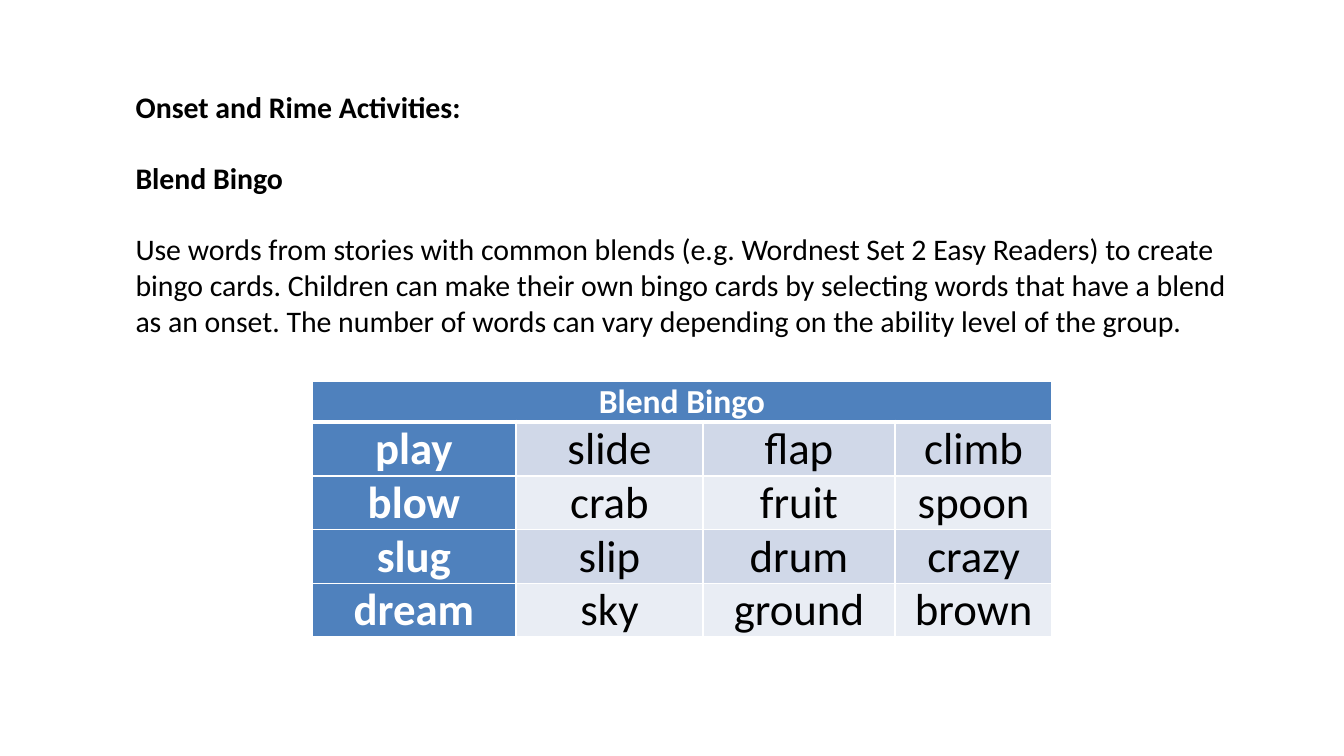
from dataclasses import dataclass

from lxml.etree import SubElement
from pptx import Presentation
from pptx.dml.color import RGBColor
from pptx.enum.text import MSO_ANCHOR, MSO_AUTO_SIZE, PP_ALIGN
from pptx.oxml.ns import qn
from pptx.util import Inches, Pt


@dataclass(frozen=True)
class Theme:
    font: str = "Calibri"
    black: str = "000000"
    white: str = "FFFFFF"
    header: str = "4F81BD"
    bands: tuple = ("D0D8E8", "E9EDF4")
    body_size: float = 16
    caption_size: float = 18
    word_size: float = 24
    paragraph_gap: float = 19
    table_spacing: float = 0.98
    thin_border: float = 1
    thick_border: float = 3


def apply_format(target, values):
    for name, value in values.items():
        setattr(target, name, value)


class SlideBuilder:
    def __init__(self, presentation, theme):
        self.theme = theme
        self.slide = presentation.slides.add_slide(presentation.slide_layouts[5])

    def style_paragraph(self, paragraph, size, color, bold, alignment):
        paragraph.alignment = alignment
        apply_format(paragraph.font, {"name": self.theme.font, "size": Pt(size), "bold": bold})
        paragraph.font.color.rgb = RGBColor.from_string(color)

    def fill_text(self, shape, items):
        frame = shape.text_frame
        apply_format(frame, {
            "word_wrap": True,
            "auto_size": MSO_AUTO_SIZE.NONE,
            "vertical_anchor": MSO_ANCHOR.TOP,
        })
        for index, (text, bold) in enumerate(items):
            paragraph = frame.add_paragraph() if index else frame.paragraphs[0]
            paragraph.text = text
            if index:
                paragraph.space_before = Pt(self.theme.paragraph_gap)
            self.style_paragraph(
                paragraph, self.theme.body_size, self.theme.black, bold, PP_ALIGN.LEFT
            )

    def add_title(self, text, left, top, width, height):
        title = self.slide.shapes.title
        apply_format(title, {"left": left, "top": top, "width": width, "height": height})
        self.fill_text(title, [(text, True)])

    def add_text(self, items, left, top, width, height):
        self.fill_text(self.slide.shapes.add_textbox(left, top, width, height), items)

    def set_borders(self, cell, widths):
        properties = cell._tc.get_or_add_tcPr()
        for side, width in widths.items():
            line = SubElement(properties, qn(f"a:ln{side}"), w=str(Pt(width)))
            fill = SubElement(line, qn("a:solidFill"))
            SubElement(fill, qn("a:srgbClr"), val=self.theme.white)

    def style_cell(self, cell, row, column):
        theme = self.theme
        heading = row == 0 or column == 0
        widths = dict.fromkeys("LRTB", theme.thin_border)
        if row < 2:
            widths["T" if row else "B"] = theme.thick_border
        self.set_borders(cell, widths)
        apply_format(cell, {
            "margin_left": Inches(0.07),
            "margin_right": Inches(0.07),
            "margin_top": 0,
            "margin_bottom": 0,
        })
        cell.fill.solid()
        color = theme.header if heading else theme.bands[(row - 1) % 2]
        cell.fill.fore_color.rgb = RGBColor.from_string(color)
        paragraph = cell.text_frame.paragraphs[0]
        paragraph.line_spacing = theme.table_spacing
        self.style_paragraph(
            paragraph,
            theme.word_size if row else theme.caption_size,
            theme.white if heading else theme.black,
            heading,
            PP_ALIGN.CENTER,
        )

    def add_bingo_table(self, caption, words, left, top, column_widths, row_heights):
        shape = self.slide.shapes.add_table(
            len(row_heights), len(column_widths), left, top,
            sum(column_widths), sum(row_heights),
        )
        table = shape.table
        for column, width in zip(table.columns, column_widths):
            column.width = width
        for row, height in zip(table.rows, row_heights):
            row.height = height
        table.cell(0, 0).merge(table.cell(0, len(column_widths) - 1))
        table.cell(0, 0).text = caption
        for row in range(len(row_heights)):
            for column in range(len(column_widths)):
                cell = table.cell(row, column)
                if row:
                    cell.text = words[row - 1][column]
                self.style_cell(cell, row, column)


def main():
    presentation = Presentation()
    slide_width = Inches(10)
    apply_format(presentation, {
        "slide_width": slide_width,
        "slide_height": slide_width * 9 // 16,
    })
    builder = SlideBuilder(presentation, Theme())
    builder.add_title(
        "Onset and Rime Activities:", Inches(0.91), Inches(0.61), Inches(8.35), Inches(0.37)
    )
    instructions = [
        ("Blend Bingo", True),
        ("Use words from stories with common blends (e.g. Wordnest Set 2 Easy Readers) "
         "to create bingo cards. Children can make their own bingo cards by selecting "
         "words that have a blend as an onset. The number of words can vary depending "
         "on the ability level of the group.", False),
    ]
    builder.add_text(instructions, Inches(0.91), Inches(1.14), Inches(8.35), Inches(1.73))
    words = [
        ("play", "slide", "flap", "climb"),
        ("blow", "crab", "fruit", "spoon"),
        ("slug", "slip", "drum", "crazy"),
        ("dream", "sky", "ground", "brown"),
    ]
    builder.add_bingo_table(
        "Blend Bingo", words, Inches(2.32), Inches(2.84),
        [Inches(width) for width in (1.52, 1.39, 1.43, 1.17)],
        [Inches(0.3)] + [Inches(0.4)] * len(words),
    )
    presentation.save("out.pptx")


if __name__ == "__main__":
    main()
